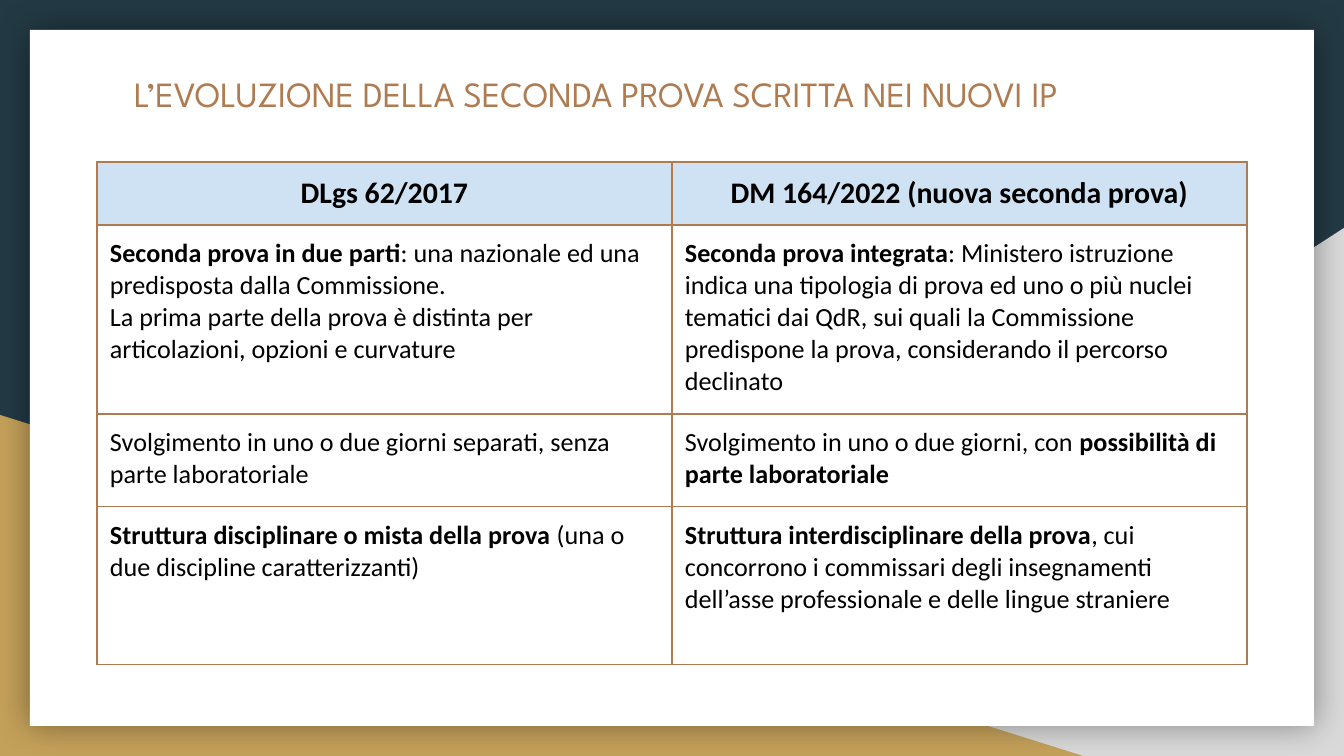
from dataclasses import dataclass

from lxml.etree import SubElement
from pptx import Presentation
from pptx.dml.color import RGBColor
from pptx.enum.shapes import MSO_SHAPE as Shape
from pptx.enum.text import MSO_ANCHOR as Anchor, PP_ALIGN as Align
from pptx.oxml import parse_xml
from pptx.oxml.ns import nsdecls, qn
from pptx.util import Emu, Pt

EMU_PER_PX = 914400 / 134.4


@dataclass(frozen=True)
class Theme:
    night: str = "233A44"
    grey: str = "D9D9D9"
    gold: str = "C4A15A"
    white: str = "FFFFFF"
    copper: str = "AF7B51"
    sky: str = "CFE2F3"
    ink: str = "000000"
    title_font: str = "League Spartan"
    body_font: str = "Calibri"
    title_size: int = 19
    header_size: int = 16
    body_size: int = 14
    border: float = 0.75
    inset: int = 13


def px(value):
    return Emu(round(value * EMU_PER_PX))


def rgb(value):
    return RGBColor.from_string(value)


class SlideBuilder:
    def __init__(self, page, theme):
        self.page, self.theme = page, theme

    def background(self, color):
        fill = self.page.background.fill
        fill.solid()
        fill.fore_color.rgb = rgb(color)

    def shape(self, kind, bounds, color, flip=False):
        shape = self.page.shapes.add_shape(kind, *map(px, bounds))
        shape.shadow.inherit = False
        shape.fill.solid()
        shape.fill.fore_color.rgb = rgb(color)
        shape.line.fill.background()
        if flip:
            shape.element.spPr.find(qn("a:xfrm")).set("flipH", "1")
        return shape

    def glow(self, shape, blur, alpha):
        effects = shape.element.spPr.find(qn("a:effectLst"))
        shadow = SubElement(effects, qn("a:outerShdw"), blurRad=str(Pt(blur)), dist="0",
                            algn="ctr", rotWithShape="0")
        color = SubElement(shadow, qn("a:srgbClr"), val=self.theme.ink)
        SubElement(color, qn("a:alpha"), val=str(alpha * 1000))

    def add_text(self, frame, paragraphs, font, size, color, align=Align.LEFT):
        """Each paragraph is a list of (text, bold) spans."""
        frame.word_wrap = True
        for index, spans in enumerate(paragraphs):
            para = frame.paragraphs[0] if index == 0 else frame.add_paragraph()
            para.alignment = align
            for text, bold in spans:
                span = para.add_run()
                span.text = text
                span.font.color.rgb = rgb(color)
                formats = {"name": font, "size": Pt(size), "bold": bold}
                for name, value in formats.items():
                    setattr(span.font, name, value)

    def inset(self, target):
        for side in ("left", "top", "right", "bottom"):
            setattr(target, f"margin_{side}", px(self.theme.inset))

    def title(self, bounds, text):
        frame = self.page.shapes.add_textbox(*map(px, bounds)).text_frame
        self.inset(frame)
        frame.vertical_anchor = Anchor.TOP
        self.add_text(frame, [[(text, False)]], self.theme.title_font,
                      self.theme.title_size, self.theme.copper)

    def borders(self, cell):
        properties = cell._tc.get_or_add_tcPr()
        for index, side in enumerate("LRTB"):
            properties.insert(index, parse_xml(
                f'<a:ln{side} {nsdecls("a")} w="{Pt(self.theme.border)}"><a:solidFill>'
                f'<a:srgbClr val="{self.theme.copper}"/></a:solidFill></a:ln{side}>'))

    def table(self, left, top, column_width, row_heights, rows):
        theme, columns = self.theme, len(rows[0])
        bounds = left, top, column_width * columns, sum(row_heights)
        table = self.page.shapes.add_table(len(rows), columns, *map(px, bounds)).table
        table.first_row = table.horz_banding = False
        for column in table.columns:
            column.width = px(column_width)
        for r, (height, row) in enumerate(zip(row_heights, rows)):
            table.rows[r].height = px(height)
            header = r == 0
            for c, paragraphs in enumerate(row):
                cell = table.cell(r, c)
                self.inset(cell)
                if header:
                    cell.fill.solid()
                    cell.fill.fore_color.rgb = rgb(theme.sky)
                else:
                    cell.fill.background()
                self.borders(cell)
                self.add_text(cell.text_frame, paragraphs, theme.body_font,
                              theme.header_size if header else theme.body_size,
                              theme.ink, Align.CENTER if header else Align.LEFT)


ROWS = [
    [[[("DLgs 62/2017", True)]],
     [[("DM 164/2022 (nuova seconda prova)", True)]]],
    [[[("Seconda prova in due parti", True),
       (": una nazionale ed una predisposta dalla Commissione.", False)],
      [("La prima parte della prova è distinta per articolazioni, opzioni e curvature", False)]],
     [[("Seconda prova integrata", True),
       (": Ministero istruzione indica una tipologia di prova ed uno o più nuclei tematici "
        "dai QdR, sui quali la Commissione predispone la prova, considerando il percorso "
        "declinato", False)]]],
    [[[("Svolgimento in uno o due giorni separati, senza parte laboratoriale", False)]],
     [[("Svolgimento in uno o due giorni, con ", False),
       ("possibilità di parte laboratoriale", True)]]],
    [[[("Struttura disciplinare o mista della prova", True),
       (" (una o due discipline caratterizzanti)", False)]],
     [[("Struttura interdisciplinare della prova", True),
       (", cui concorrono i commissari degli insegnamenti dell’asse professionale e delle "
        "lingue straniere", False)]]],
]


def main():
    deck = Presentation()
    deck.slide_width, deck.slide_height = px(1344), px(756)
    theme = Theme()
    builder = SlideBuilder(deck.slides.add_slide(deck.slide_layouts[6]), theme)

    # Backdrop: dark field with two corner triangles
    builder.background(theme.night)
    builder.shape(Shape.RIGHT_TRIANGLE, (527, 228, 817, 528), theme.grey, flip=True)
    builder.shape(Shape.RIGHT_TRIANGLE, (0, 415, 1083, 341), theme.gold)

    # White card with a soft shadow
    card = builder.shape(Shape.RECTANGLE, (30, 30, 1284, 696), theme.white)
    builder.glow(card, blur=18, alpha=40)

    # Title and comparison table
    builder.title((121, 59, 1103, 86), "L’EVOLUZIONE DELLA SECONDA PROVA SCRITTA NEI NUOVI IP")
    builder.table(97, 162, 575, (63, 189, 93, 158), ROWS)

    deck.save("out.pptx")


if __name__ == "__main__":
    main()
